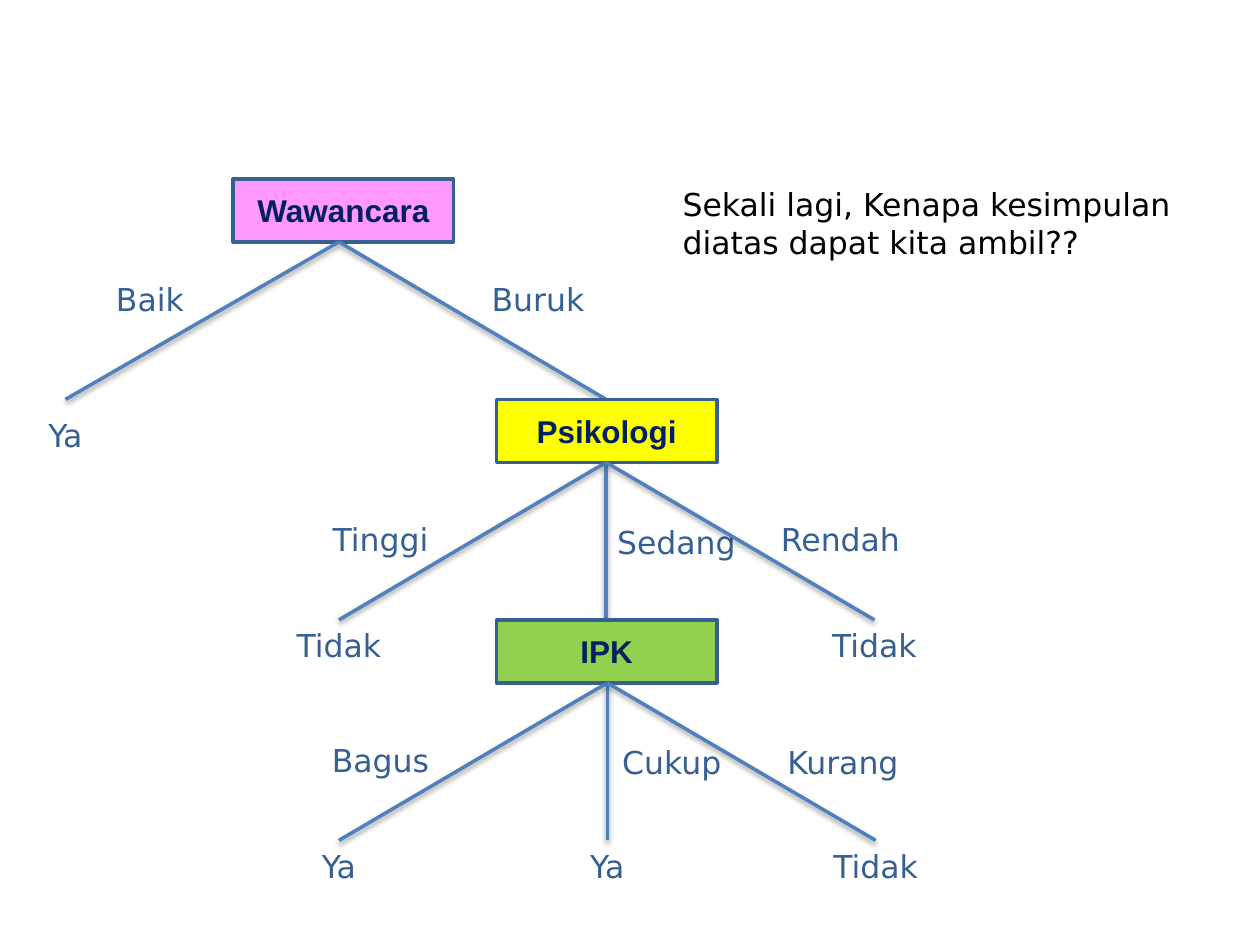
from pptx import Presentation
from pptx.dml.color import RGBColor
from pptx.enum.shapes import MSO_CONNECTOR, MSO_SHAPE
from pptx.enum.text import MSO_ANCHOR, PP_ALIGN
from pptx.util import Inches, Pt

COLORS = {
    "pink": "FF99FF", "yellow": "FFFF00", "green": "92D050",
    "border": "376092", "branch": "4F81BD",
    "node_text": "002060", "label": "376092", "question": "000000",
}
QUESTION = "Sekali lagi, Kenapa kesimpulan diatas dapat kita ambil??"

# Branch: answer, (answer left, top offset, centred), horizontal run, outcome.
# An outcome of None leads to the next attribute.
LEVELS = [
    {"attribute": "Wawancara", "fill": "pink", "left": 1.85, "fork": 2.69, "outcome_gap": 0.08,
     "branches": [("Baik", (0.69, 0.25, True), -2.17, "Ya"),
                  ("Buruk", (3.77, 0.25, True), 2.12, None)]},
    {"attribute": "Psikologi", "fill": "yellow", "left": 3.94, "fork": 4.81, "outcome_gap": 0,
     "branches": [("Tinggi", (2.52, 0.41, True), -2.12, "Tidak"),
                  ("Sedang", (4.8, 0.43, False), 0, None),
                  ("Rendah", (6.1, 0.41, False), 2.13, "Tidak")]},
    {"attribute": "IPK", "fill": "green", "left": 3.94, "fork": 4.82, "outcome_gap": 0,
     "branches": [("Bagus", (2.52, 0.41, True), -2.13, "Ya"),
                  ("Cukup", (4.84, 0.43, False), 0, "Ya"),
                  ("Kurang", (6.15, 0.43, False), 2.13, "Tidak")]},
]
FIRST_TOP, NODE_W, NODE_H, DROP = 1.42, 1.75, 0.5, 1.25
LABEL_W, WIDE_LABEL_W, LABEL_H = 1, 1.33, 0.42


def rgb(name):
    return RGBColor.from_string(COLORS[name])


def write(frame, text, color, face, centred, bold=False):
    frame.word_wrap = True
    paragraph = frame.paragraphs[0]
    paragraph.text = text
    paragraph.alignment = PP_ALIGN.CENTER if centred else PP_ALIGN.LEFT
    font = paragraph.font
    font.name, font.size, font.bold = face, Pt(18), bold
    font.color.rgb = rgb(color)


def add_label(slide, text, left, top, width, height=LABEL_H, centred=True, color="label"):
    box = slide.shapes.add_textbox(Inches(left), Inches(top), Inches(width), Inches(height))
    write(box.text_frame, text, color, "DejaVu Sans", centred)


def add_node(slide, level, top):
    node = slide.shapes.add_shape(MSO_SHAPE.FLOWCHART_PROCESS, Inches(level["left"]),
                                  Inches(top), Inches(NODE_W), Inches(NODE_H))
    node.shadow.inherit = False
    node.fill.solid()
    node.fill.fore_color.rgb = rgb(level["fill"])
    node.line.color.rgb = rgb("border")
    node.line.width = Pt(2)
    node.text_frame.vertical_anchor = MSO_ANCHOR.MIDDLE
    write(node.text_frame, level["attribute"], "node_text", "Arial", True, bold=True)


def add_branch(slide, x, y, run):
    """Draw a branch that keeps the soft shadow of the theme."""
    line = slide.shapes.add_connector(MSO_CONNECTOR.STRAIGHT, Inches(x), Inches(y),
                                      Inches(x + run), Inches(y + DROP))
    line.line.color.rgb = rgb("branch")
    line.line.width = Pt(2)


def add_level(slide, level, top):
    add_node(slide, level, top)
    fork_y = top + NODE_H
    for answer, (left, offset, centred), run, outcome in level["branches"]:
        add_branch(slide, level["fork"], fork_y, run)
        add_label(slide, answer, left, fork_y + offset,
                  LABEL_W if centred else WIDE_LABEL_W, centred=centred)
        if outcome:
            add_label(slide, outcome, level["fork"] + run - LABEL_W / 2,
                      fork_y + DROP + level["outcome_gap"], LABEL_W)


def main():
    prs = Presentation()
    prs.slide_width, prs.slide_height = Inches(10), Inches(7.5)
    slide = prs.slides.add_slide(prs.slide_layouts[6])
    for depth, level in enumerate(LEVELS):
        add_level(slide, level, FIRST_TOP + depth * (NODE_H + DROP))
    add_label(slide, QUESTION, 5.32, 1.42, 4.37, 0.71, centred=False, color="question")
    prs.save("out.pptx")


if __name__ == "__main__":
    main()
